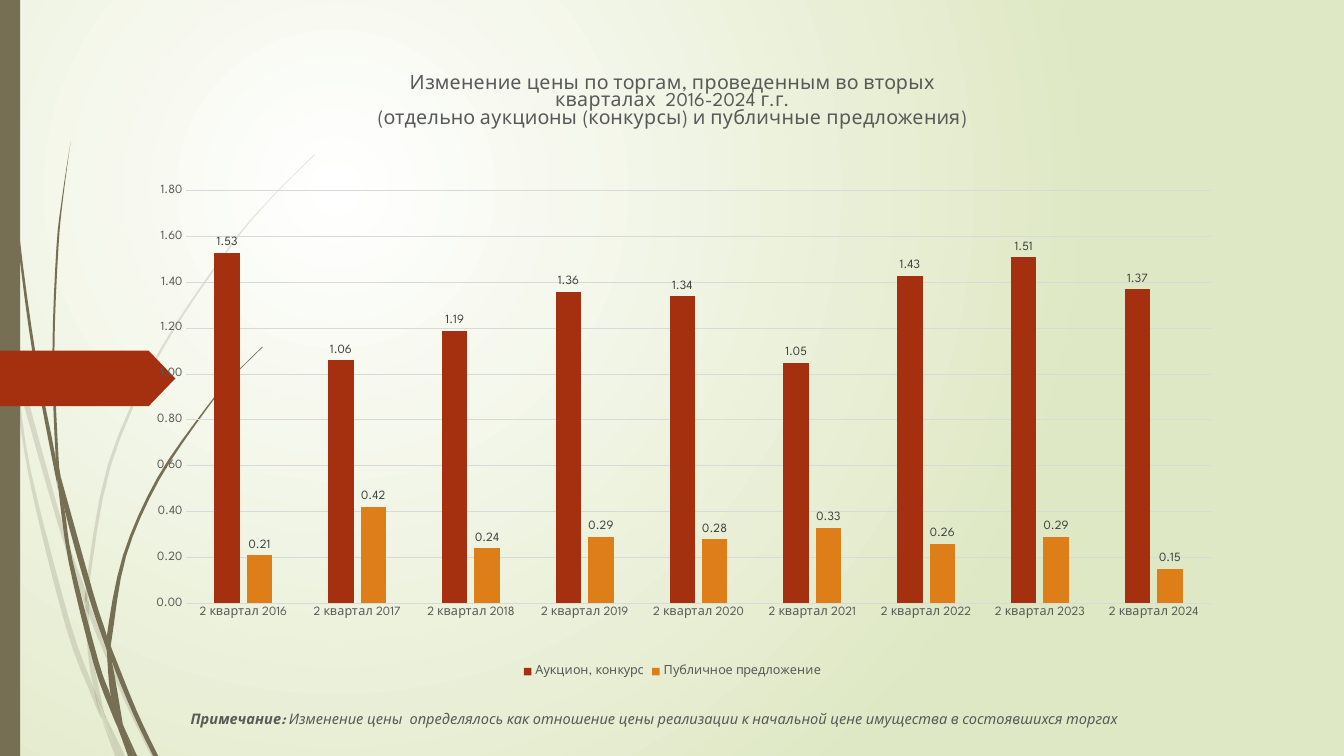
from lxml import etree
from pptx import Presentation
from pptx.chart.data import CategoryChartData
from pptx.dml.color import RGBColor
from pptx.enum.chart import XL_CHART_TYPE, XL_LABEL_POSITION, XL_LEGEND_POSITION, XL_TICK_MARK
from pptx.enum.shapes import MSO_SHAPE
from pptx.enum.text import MSO_ANCHOR
from pptx.oxml.ns import qn
from pptx.util import Inches, Pt

COLUMNS = XL_CHART_TYPE.COLUMN_CLUSTERED
ABOVE_BAR = XL_LABEL_POSITION.OUTSIDE_END
LEGEND_BOTTOM = XL_LEGEND_POSITION.BOTTOM
NO_TICK = XL_TICK_MARK.NONE
FONT = "League Spartan"
OLIVE, RUST, ORANGE = "766F54", "A53010", "DE7E18"
GREY, DARK, RULE = "595959", "404040", "D9D9D9"
NUMBER_FORMAT = "#,##0.00"

TITLE = ["Изменение цены по торгам, проведенным во вторых",
         "кварталах  2016-2024 г.г.",
         "(отдельно аукционы (конкурсы) и публичные предложения)"]
NOTE = ["Примечание:", " Изменение цены  определялось как отношение цены реализации "
        "к начальной цене имущества в состоявшихся торгах"]
YEARS = range(2016, 2025)
SERIES = [
    ("Аукцион, конкурс", RUST, [1.53, 1.06, 1.19, 1.36, 1.34, 1.05, 1.43, 1.51, 1.37]),
    ("Публичное предложение", ORANGE, [0.21, 0.42, 0.24, 0.29, 0.28, 0.33, 0.26, 0.29, 0.15]),
]

# Each grass blade is a pair of edges running from tip to root,
# on a grid with 7.5 rows to the slide's height.
PALE_BLADES = [
    ([(0, 2.82), (0, 2.99), (0.1, 3.44), (0.11, 3.5)], [(0, 2.82), (0.09, 3.22), (0.11, 3.5)]),
    ([(0.14, 3.45), (0.17, 3.76), (0.58, 5.22), (0.84, 5.99)],
     [(0.14, 3.45), (0.62, 5.2), (0.85, 5.86), (0.84, 5.99)]),
    ([(0.88, 5.96), (0.88, 6.1), (1.23, 6.94), (1.5, 7.5)],
     [(0.88, 5.96), (0.92, 6.07), (1.27, 6.92), (1.55, 7.5)]),
    ([(1.05, 7.11), (1.19, 7.5)], [(1.05, 7.11), (1.24, 7.5)]),
    ([(0.11, 3.5), (0.28, 4.7), (0.65, 6.21), (0.92, 6.93), (1.01, 7.14)],
     [(0.11, 3.5), (0.17, 3.76), (0.31, 4.69), (0.7, 6.19), (0.93, 6.83), (1.01, 7.14)]),
    ([(0.84, 5.99), (0.87, 6.46), (0.93, 6.83), (1.05, 7.11)],
     [(0.84, 5.99), (0.88, 6.1), (0.91, 6.46), (1.03, 7.06), (1.05, 7.11)]),
    ([(3.12, 1.53), (2.68, 1.97), (2.28, 2.44), (1.58, 3.48), (1.07, 4.61), (0.85, 5.84), (0.88, 5.96)],
     [(3.12, 1.54), (2.68, 1.98), (2.29, 2.45), (1.6, 3.49), (1.1, 4.62), (0.88, 5.84), (0.88, 5.96)]),
    ([(1.01, 7.14), (1.14, 7.5)], [(1.01, 7.14), (1.19, 7.5)]),
    ([(0.85, 5.86), (0.84, 5.99), (0.88, 6.1)], [(0.85, 5.86), (0.88, 5.96), (0.88, 6.1)]),
    ([(0.93, 6.83), (0.99, 7.07), (1.19, 7.5)], [(0.93, 6.83), (1.05, 7.11), (1.19, 7.5)]),
]
DARK_BLADES = [
    ([(0.03, 0), (0.04, 0.48), (0.07, 1.1), (0.17, 2.33), (0.33, 3.55), (0.56, 4.77), (0.57, 4.81)],
     [(0.04, 0), (0.05, 0.48), (0.08, 1.09), (0.19, 2.32), (0.36, 3.55), (0.55, 4.53), (0.57, 4.81)]),
    ([(0.6, 4.72), (0.64, 5.05), (0.88, 5.92), (1.06, 6.45)],
     [(0.6, 4.72), (0.93, 5.9), (1.06, 6.31), (1.06, 6.45)]),
    ([(1.1, 6.41), (1.11, 6.56), (1.32, 7.08), (1.52, 7.5)],
     [(1.1, 6.41), (1.13, 6.49), (1.36, 7.06), (1.57, 7.5)]),
    ([(0.57, 4.77), (0.68, 5.57), (0.93, 6.59), (1.11, 7.08), (1.17, 7.22)],
     [(0.57, 4.77), (0.64, 5.05), (0.72, 5.56), (0.98, 6.57), (1.1, 6.91), (1.17, 7.22)]),
    ([(0.7, 1.41), (0.62, 1.93), (0.56, 2.45), (0.52, 3.49), (0.55, 4.49), (0.6, 4.72)],
     [(0.7, 1.41), (0.63, 1.93), (0.58, 2.45), (0.54, 3.49), (0.58, 4.53), (0.6, 4.72)]),
    ([(1.22, 7.19), (1.33, 7.5)], [(1.22, 7.19), (1.36, 7.5)]),
    ([(0.55, 4.49), (0.57, 4.77), (0.64, 5.05)], [(0.55, 4.49), (0.6, 4.72), (0.64, 5.05)]),
    ([(2.6, 3.44), (2.31, 3.73), (2.04, 4.05), (1.56, 4.74), (1.22, 5.51), (1.06, 6.31), (1.1, 6.41)],
     [(2.61, 3.44), (2.31, 3.74), (2.05, 4.06), (1.58, 4.76), (1.25, 5.52), (1.11, 6.33), (1.1, 6.41)]),
    ([(1.17, 7.22), (1.27, 7.5)], [(1.17, 7.22), (1.31, 7.5)]),
    ([(1.06, 6.45), (1.1, 6.91), (1.22, 7.19)], [(1.06, 6.45), (1.11, 6.56), (1.22, 7.19)]),
    ([(1.06, 6.31), (1.06, 6.45), (1.11, 6.56)], [(1.06, 6.31), (1.1, 6.41), (1.11, 6.56)]),
    ([(1.1, 6.91), (1.17, 7.22), (1.3, 7.5)], [(1.1, 6.91), (1.22, 7.19), (1.33, 7.5)]),
]


def color(hex_string):
    return RGBColor.from_string(hex_string)


def style_font(font, size, hex_string, bold=False, italic=False):
    font.name, font.size, font.bold, font.italic = FONT, Pt(size), bold, italic
    font.color.rgb = color(hex_string)


def paint(shape, hex_string, opacity=100):
    shape.shadow.inherit = False
    shape.line.fill.background()
    shape.fill.solid()
    shape.fill.fore_color.rgb = color(hex_string)
    if opacity < 100:
        tint = shape.fill._xPr.find(".//" + qn("a:srgbClr"))
        etree.SubElement(tint, qn("a:alpha"), val=str(opacity * 1000))


def smooth_edge(points, steps=4):
    """Points along a Catmull-Rom curve through the given points."""
    padded = [points[0], *points, points[-1]]
    curve = [points[0]]
    for before, start, end, after in zip(padded, padded[1:], padded[2:], padded[3:]):
        for step in range(1, steps + 1):
            t = step / steps
            curve.append(tuple(
                (2 * b + (c - a) * t + (2 * a - 5 * b + 4 * c - d) * t ** 2
                 + (3 * b - a - 3 * c + d) * t ** 3) / 2
                for a, b, c, d in zip(before, start, end, after)))
    return curve


def draw_blades(slide, blades, unit, opacity):
    group = slide.shapes.add_group_shape()
    for left_edge, right_edge in blades:
        outline = smooth_edge(left_edge) + smooth_edge(right_edge)[::-1]
        points = [(int(x * unit), int(y * unit)) for x, y in outline]
        builder = group.shapes.build_freeform(*points[0])
        builder.add_line_segments(points[1:], close=True)
        paint(builder.convert_to_shape(), OLIVE, opacity)


def draw_backdrop(slide, width, height):
    fill = slide.background.fill
    fill.gradient()
    for stop, hex_string in zip(fill.gradient_stops, ("FFFFFF", "DFE8C4")):
        stop.color.rgb = color(hex_string)
    gradient = slide.element.find(".//" + qn("a:gradFill"))
    gradient.remove(gradient.find(qn("a:lin")))
    circle = etree.SubElement(gradient, qn("a:path"), {"path": "circle"})
    etree.SubElement(circle, qn("a:fillToRect"), l="50000", t="50000", r="100000", b="100000")

    draw_blades(slide, PALE_BLADES, height / 7.5, 20)
    draw_blades(slide, DARK_BLADES, height / 7.5, 100)
    bar = slide.shapes.add_shape(MSO_SHAPE.RECTANGLE, 0, 0, int(width * 0.015), height)
    paint(bar, OLIVE)
    marker = slide.shapes.add_shape(MSO_SHAPE.PENTAGON, 0, int(height * 0.464),
                                    int(width * 0.1305), int(height * 0.0733))
    marker.adjustments[0] = 0.48
    paint(marker, RUST)


def place_plot(chart, **shares):
    """Fix the inner plot area at shares of the chart's size."""
    plot_area = chart._chartSpace.find(".//" + qn("c:plotArea"))
    for old_layout in plot_area.findall(qn("c:layout")):
        plot_area.remove(old_layout)
    layout = etree.Element(qn("c:layout"))
    plot_area.insert(0, layout)
    manual = etree.SubElement(layout, qn("c:manualLayout"))
    settings = {"layoutTarget": "inner", "xMode": "edge", "yMode": "edge", **shares}
    for name, value in settings.items():
        etree.SubElement(manual, qn("c:" + name), val=str(value))


def draw_price_chart(slide, left, top, width, height):
    data = CategoryChartData(number_format=NUMBER_FORMAT)
    data.categories = [f"2 квартал {year}" for year in YEARS]
    for name, _, values in SERIES:
        data.add_series(name, values)
    chart = slide.shapes.add_chart(COLUMNS, left, top, width, height, data).chart
    style_font(chart.font, 10, "000000")

    title_frame = chart.chart_title.text_frame
    title_frame.text = "\n".join(TITLE)
    for paragraph in title_frame.paragraphs:
        style_font(paragraph.runs[0].font, 14, GREY)
    place_plot(chart, x=0.052, y=0.22, w=0.944, h=0.656)

    chart.has_legend = True
    chart.legend.position = LEGEND_BOTTOM
    chart.legend.include_in_layout = False
    style_font(chart.legend.font, 9, GREY)
    for axis in (chart.category_axis, chart.value_axis):
        axis.major_tick_mark = axis.minor_tick_mark = NO_TICK
        style_font(axis.tick_labels.font, 9, GREY)
    value_axis = chart.value_axis
    value_axis.minimum_scale, value_axis.maximum_scale, value_axis.major_unit = 0, 1.8, 0.2
    value_axis.tick_labels.number_format = NUMBER_FORMAT
    value_axis.tick_labels.number_format_is_linked = False
    value_axis.format.line.fill.background()
    for line in (chart.category_axis.format.line, value_axis.major_gridlines.format.line):
        line.width = Pt(0.75)
        line.color.rgb = color(RULE)

    plot = chart.plots[0]
    plot.gap_width, plot.overlap, plot.vary_by_categories = 219, -27, False
    for series, (_, hex_string, _) in zip(plot.series, SERIES):
        series.format.fill.solid()
        series.format.fill.fore_color.rgb = color(hex_string)
        labels = series.data_labels
        labels.show_value, labels.position = True, ABOVE_BAR
        labels.number_format, labels.number_format_is_linked = NUMBER_FORMAT, False
        style_font(labels.font, 9, DARK)


def write_note(placeholder, left, top, width, height):
    placeholder.left, placeholder.top = left, top
    placeholder.width, placeholder.height = width, height
    frame = placeholder.text_frame
    frame.vertical_anchor = MSO_ANCHOR.MIDDLE
    frame.margin_top = Inches(0.18)
    paragraph = frame.paragraphs[0]
    paragraph.space_before = Pt(0)
    properties = paragraph._p.get_or_add_pPr()
    properties.set("marL", "0")
    properties.set("indent", "0")
    etree.SubElement(properties, qn("a:buNone"))
    for text, bold in zip(NOTE, (True, False)):
        run = paragraph.add_run()
        run.text = text
        style_font(run.font, 10.4, GREY, bold, italic=True)


def main():
    presentation = Presentation()
    presentation.slide_width, presentation.slide_height = Inches(13.33), Inches(7.5)
    width, height = presentation.slide_width, presentation.slide_height
    slide = presentation.slides.add_slide(presentation.slide_layouts[1])
    title, note = slide.placeholders
    title.element.getparent().remove(title.element)

    draw_backdrop(slide, width, height)
    draw_price_chart(slide, Inches(1.29), Inches(0.52), Inches(10.76), Inches(6.24))
    write_note(note, Inches(1.79), Inches(6.76), Inches(9.75), Inches(0.6))
    presentation.save("out.pptx")


if __name__ == "__main__":
    main()
